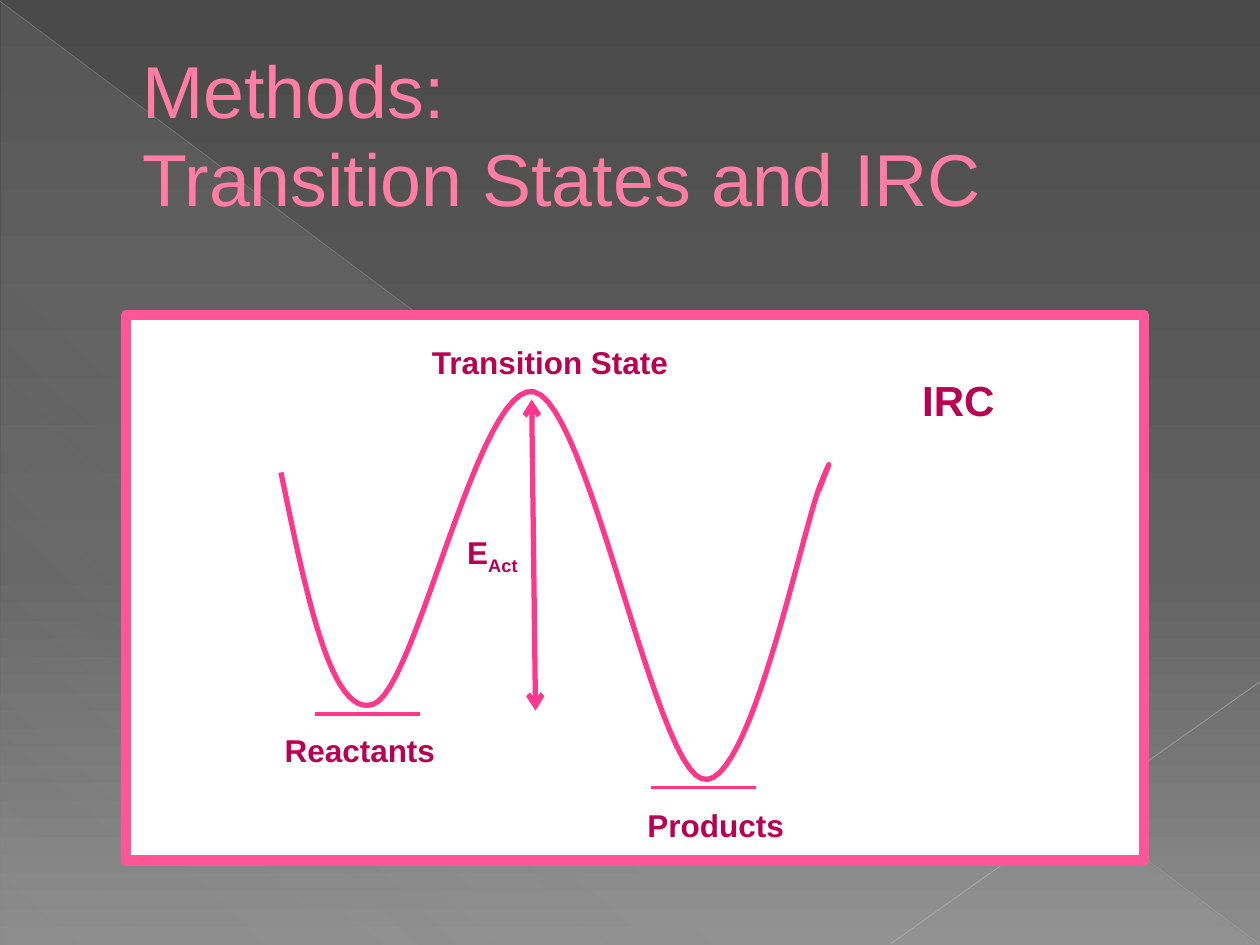
from dataclasses import dataclass

from lxml import etree
from pptx import Presentation
from pptx.dml.color import RGBColor
from pptx.enum.shapes import MSO_CONNECTOR, MSO_SHAPE
from pptx.enum.text import MSO_ANCHOR, MSO_AUTO_SIZE, PP_ALIGN
from pptx.oxml.ns import qn
from pptx.util import Inches, Pt

STRAIGHT = MSO_CONNECTOR.STRAIGHT
RECTANGLE = MSO_SHAPE.RECTANGLE
RIGHT_TRIANGLE = MSO_SHAPE.RIGHT_TRIANGLE
MIDDLE = MSO_ANCHOR.MIDDLE
FIT_SHAPE = MSO_AUTO_SIZE.SHAPE_TO_FIT_TEXT
NO_AUTOFIT = MSO_AUTO_SIZE.NONE
LEFT = PP_ALIGN.LEFT


@dataclass(frozen=True)
class Theme:
    font: str = "Arial"
    title: str = "FF7DA7"
    label: str = "B80053"
    curve: str = "FF388C"
    frame: str = "FF5698"
    panel: str = "FFFFFF"
    title_size: int = 42
    heading_size: int = 24
    label_size: int = 18


THEME = Theme()
BACKGROUND_STOPS = [(0, "4A4A4A", 100), (60, "626262", 100), (100, "8C8C8C", 100)]
SHEEN_STOPS = [(0, "D2D2D2", 10), (70, "D2D2D2", 8), (100, "D2D2D2", 1)]

# Energy curve: a start point, then two control points and an end per segment.
CURVE_START = (2.23, 3.75)
CURVE_SEGMENTS = [
    ((2.43, 4.72), (2.63, 5.7), (2.96, 5.59)),
    ((3.3, 5.49), (3.8, 3.01), (4.24, 3.11)),
    ((4.67, 3.21), (5.19, 6.06), (5.57, 6.18)),
    ((5.94, 6.31), (6.36, 4.23), (6.51, 3.85)),
    ((6.67, 3.46), (6.5, 3.89), (6.5, 3.89)),
]
LABELS = [
    ("Reactants", 2.16, 5.75, 1.41),
    ("Products", 5.04, 6.35, 1.3),
    ("Transition State", 3.33, 2.67, 2.1),
]
LEVELS = [(2.5, 5.67), (5.17, 6.25)]
LEVEL_WIDTH = 0.83


def rgb(color):
    return RGBColor.from_string(color)


def add_alpha(color_element, percent):
    etree.SubElement(color_element, qn("a:alpha"), val=str(percent * 1000))


def set_gradient(fill, owner, stops, angle):
    """Give fill, found inside the XML of owner, stops of (position, colour, opacity)."""
    fill.gradient()
    grad = owner.find(".//" + qn("a:gradFill"))
    for child in list(grad):
        grad.remove(child)
    stop_list = etree.SubElement(grad, qn("a:gsLst"))
    for position, color, opacity in stops:
        stop = etree.SubElement(stop_list, qn("a:gs"), pos=str(position * 1000))
        add_alpha(etree.SubElement(stop, qn("a:srgbClr"), val=color), opacity)
    etree.SubElement(grad, qn("a:lin"), ang=str(angle * 60000), scaled="0")


def add_line(slide, start, end, color, width, opacity=100, arrows=False):
    line = slide.shapes.add_connector(STRAIGHT, *map(Inches, start + end))
    line.line.color.rgb = rgb(color)
    line.line.width = Pt(width)
    properties = line._element.spPr
    if opacity < 100:
        add_alpha(properties.find(".//" + qn("a:srgbClr")), opacity)
    if arrows:
        for tag in ("a:headEnd", "a:tailEnd"):
            etree.SubElement(properties.find(qn("a:ln")), qn(tag), type="arrow")
    etree.SubElement(properties, qn("a:effectLst"))


def format_run(r, size, color, bold=False):
    r.font.name = THEME.font
    r.font.size = Pt(size)
    r.font.bold = bold
    r.font.color.rgb = rgb(color)


def add_label(slide, text, left, top, width, height=0.4, size=THEME.label_size, subscript=""):
    box = slide.shapes.add_textbox(*map(Inches, (left, top, width, height)))
    tf = box.text_frame
    tf.word_wrap = False
    tf.auto_size = FIT_SHAPE
    p = tf.paragraphs[0]
    p.text = text
    if subscript:
        r = p.add_run()
        r.text = subscript
        r.font._element.set("baseline", "-25000")
    for r in p.runs:
        format_run(r, size, THEME.label, bold=True)


def add_backdrop(slide):
    set_gradient(slide.background.fill, slide.element, BACKGROUND_STOPS, 90)
    sheen = slide.shapes.add_shape(RIGHT_TRIANGLE, *map(Inches, (0.01, 0.02, 9.98, 7.48)))
    sheen.shadow.inherit = False
    sheen.line.fill.background()
    set_gradient(sheen.fill, sheen._element, SHEEN_STOPS, 133)
    add_line(slide, (0, 0.01), (9.99, 7.49), "BFBFBF", 0.39, opacity=35)
    add_line(slide, (10, 5.41), (7.07, 7.49), "C6C6C6", 0.47, opacity=45)


def set_title(slide, text):
    """Fill the title and bring it in front of the backdrop."""
    title = slide.shapes.title
    title.left, title.top, title.width, title.height = map(Inches, (0.5, 0.29, 9, 1.53))
    tf = title.text_frame
    tf.text = text
    tf.vertical_anchor = MIDDLE
    tf.auto_size = NO_AUTOFIT
    p = tf.paragraphs[0]
    p.alignment = LEFT
    p._p.get_or_add_pPr().set("marL", str(Inches(0.53)))
    for r in p.runs:
        format_run(r, THEME.title_size, THEME.title)
    slide.shapes._spTree.append(title._element)


def add_panel(slide):
    panel = slide.shapes.add_shape(RECTANGLE, *map(Inches, (1, 2.5, 8.08, 4.33)))
    panel.shadow.inherit = False
    panel.fill.solid()
    panel.fill.fore_color.rgb = rgb(THEME.panel)
    panel.line.color.rgb = rgb(THEME.frame)
    panel.line.width = Pt(6)


def bezier_points(start, first, second, end, steps=24):
    """Points in EMU along a cubic curve, without its start."""
    points = []
    for step in range(1, steps + 1):
        t = step / steps
        u = 1 - t
        weights = (u**3, 3 * u * u * t, 3 * u * t * t, t**3)
        controls = zip(start, first, second, end)
        points.append(tuple(Inches(sum(w * c for w, c in zip(weights, axis))) for axis in controls))
    return points


def add_curve(slide):
    builder = slide.shapes.build_freeform(*map(Inches, CURVE_START))
    start = CURVE_START
    for first, second, end in CURVE_SEGMENTS:
        builder.add_line_segments(bezier_points(start, first, second, end), close=False)
        start = end
    curve = builder.convert_to_shape()
    curve.shadow.inherit = False
    curve.fill.background()
    curve.line.color.rgb = rgb(THEME.curve)
    curve.line.width = Pt(3)


def main():
    prs = Presentation()
    prs.slide_width, prs.slide_height = Inches(10), Inches(7.5)
    slide = prs.slides.add_slide(prs.slide_layouts.get_by_name("Title Only"))
    add_backdrop(slide)
    set_title(slide, "Methods:\vTransition States and IRC")
    add_panel(slide)
    add_curve(slide)
    for label in LABELS:
        add_label(slide, *label)
    add_line(slide, (4.22, 3.17), (4.25, 5.64), THEME.curve, 3, arrows=True)
    add_label(slide, "E", 3.61, 4.18, 0.64, subscript="Act")
    for left, top in LEVELS:
        add_line(slide, (left, top), (left + LEVEL_WIDTH, top), THEME.curve, 2.25)
    add_label(slide, "IRC", 7.22, 2.92, 0.78, height=0.5, size=THEME.heading_size)
    prs.save("out.pptx")


if __name__ == "__main__":
    main()
